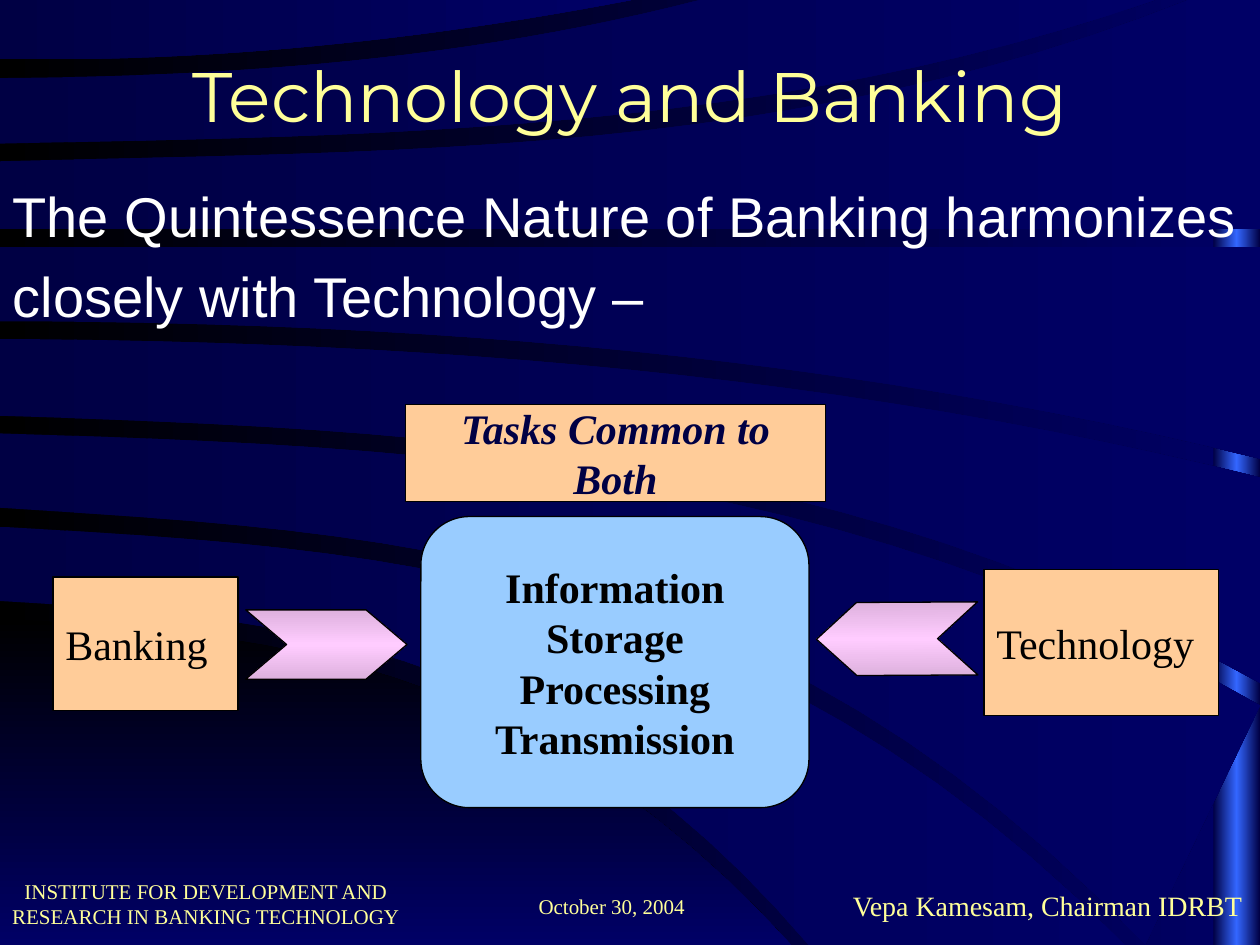
from copy import deepcopy
from math import prod

from lxml import etree
from pptx import Presentation
from pptx.dml.color import RGBColor
from pptx.enum.shapes import MSO_SHAPE
from pptx.enum.text import MSO_ANCHOR, MSO_AUTO_SIZE, PP_ALIGN
from pptx.oxml.ns import qn
from pptx.util import Inches, Pt

RECTANGLE = MSO_SHAPE.RECTANGLE
ROUNDED = MSO_SHAPE.ROUNDED_RECTANGLE
CHEVRON = MSO_SHAPE.CHEVRON
LEFT, CENTER = PP_ALIGN.LEFT, PP_ALIGN.CENTER
TOP, MIDDLE = MSO_ANCHOR.TOP, MSO_ANCHOR.MIDDLE

YELLOW, WHITE, BLACK, NAVY = "FFFF99", "FFFFFF", "000000", "000044"
PEACH, SKY, BLUE = "FFCC99", "99CCFF", "000066"
STRIPE_STOPS = [NAVY, "3366FF", NAVY]
ARROW_STOPS = ["DDB1DD", "FFCCFF", "DDB1DD"]
WIDTH, HEIGHT = 10, 7.5
CURVE_STEPS = 24


def color(value):
    return RGBColor.from_string(value)


def curve(end, *heights):
    """Points of a smooth edge from x = 0 to end through evenly spaced heights."""
    knots = range(len(heights))
    last = len(heights) - 1
    points = []
    for step in range(CURVE_STEPS + 1):
        place = last * step / CURVE_STEPS
        y = sum(height * prod((place - other) / (knot - other)
                              for other in knots if other != knot)
                for knot, height in enumerate(heights))
        points.append((end * step / CURVE_STEPS, y))
    return points


def band(upper, lower):
    return curve(*upper) + curve(*lower)[::-1]


def write_text(frame, lines, size=24, font="Times New Roman", text_color=BLACK,
               bold=False, italic=False, align=LEFT, anchor=MIDDLE,
               wrap=True, gap=0, plain_list=False):
    """Put one paragraph per line into the frame."""
    frame.word_wrap = wrap
    frame.auto_size = MSO_AUTO_SIZE.NONE
    frame.vertical_anchor = anchor
    for index, line in enumerate(lines):
        paragraph = frame.add_paragraph() if index else frame.paragraphs[0]
        paragraph.text = line
        if plain_list:
            properties = paragraph._p.get_or_add_pPr()
            properties.set("marL", "0")
            properties.set("indent", "0")
            etree.SubElement(properties, qn("a:buNone"))
        paragraph.alignment = align
        paragraph.space_before = Pt(gap if index else 0)
        paragraph.font.size = Pt(size)
        paragraph.font.name = font
        paragraph.font.bold = bold
        paragraph.font.italic = italic
        paragraph.font.color.rgb = color(text_color)


class SlideBuilder:
    def __init__(self, slide):
        self.slide = slide
        self.shapes = slide.shapes

    def gradient(self, owner, element, colors, angle=0):
        owner.fill.gradient()
        owner.fill.gradient_angle = angle
        stop_list = element.find(".//" + qn("a:gsLst"))
        while len(stop_list) < len(colors):
            stop_list.append(deepcopy(stop_list[0]))
        for index, stop in enumerate(owner.fill.gradient_stops):
            stop.position = index / (len(colors) - 1)
            stop.color.rgb = color(colors[index])

    def style(self, shape, fill, outlined, angle=0):
        shape.shadow.inherit = False
        if isinstance(fill, list):
            self.gradient(shape, shape._element.spPr, fill, angle)
        else:
            shape.fill.solid()
            shape.fill.fore_color.rgb = color(fill)
        if outlined:
            shape.line.color.rgb = color(BLACK)
            shape.line.width = Pt(0.75)
        else:
            shape.line.fill.background()

    def background(self, colors):
        self.gradient(self.slide.background, self.slide._element, colors)

    def swoosh(self, points, colors, angle=0):
        corners = [(Inches(x), Inches(y)) for x, y in points]
        builder = self.shapes.build_freeform(*corners[0])
        builder.add_line_segments(corners[1:], close=True)
        self.style(builder.convert_to_shape(), colors, False, angle)

    def box(self, kind, place, fill, lines=(), outlined=True, **text_format):
        shape = self.shapes.add_shape(kind, *map(Inches, place))
        self.style(shape, fill, outlined)
        if lines:
            write_text(shape.text_frame, lines, **text_format)

    def arrow(self, place, notch, rotation=0):
        shape = self.shapes.add_shape(CHEVRON, *map(Inches, place))
        self.style(shape, ARROW_STOPS, True, angle=270)
        shape.adjustments[0] = notch
        shape.rotation = rotation

    def label(self, place, lines, **text_format):
        shape = self.shapes.add_textbox(*map(Inches, place))
        write_text(shape.text_frame, lines, text_color=YELLOW, anchor=TOP,
                   **text_format)

    def placeholder(self, index, place, lines, **text_format):
        shape = self.slide.placeholders[index]
        shape.left, shape.top, shape.width, shape.height = map(Inches, place)
        write_text(shape.text_frame, lines, **text_format)
        # Bring in front of the backdrop
        self.shapes._spTree.append(shape._element)


def main():
    presentation = Presentation()
    presentation.slide_width = Inches(WIDTH)
    presentation.slide_height = Inches(HEIGHT)
    layout = presentation.slide_layouts[1]
    builder = SlideBuilder(presentation.slides.add_slide(layout))

    # Backdrop: each edge is its right end and its heights from left to right
    builder.background([BLACK, BLUE])
    builder.box(RECTANGLE, (9.63, 0, 0.37, HEIGHT), STRIPE_STOPS,
                outlined=False)
    glow = curve(6.28, 4.91, 5.12, 5.83, HEIGHT) + [(0, HEIGHT)]
    builder.swoosh(glow, [BLACK, BLUE], angle=270)
    swooshes = [
        band((8.93, 4.18, 4.45, 5.34, HEIGHT), (6.42, 4.77, 4.98, 5.71, HEIGHT)),
        band((WIDTH, 3.44, 3.62, 4.21, 5.6), (9.09, 4.03, 4.31, 5.23, HEIGHT)),
        band((WIDTH, 2.69, 2.8, 3.14, 3.79), (WIDTH, 3.3, 3.48, 4.06, 5.42)),
        band((WIDTH, 1.96, 1.96), (WIDTH, 2.55, 2.65, 2.99, 3.64)),
        curve(9.43, 1.28, 1.19, 0.87, 0) + [(WIDTH, 0), (WIDTH, 1.82), (0, 1.82)],
        band((5.56, 0.62, 0.56, 0.37, 0), (9.17, 1.14, 1.05, 0.75, 0)),
        curve(5.01, 0.47, 0.43, 0.27, 0) + [(0, 0)],
    ]
    for points in swooshes:
        builder.swoosh(points, [NAVY, BLUE])

    # Footer
    builder.label((0, 6.92, 3.27, 0.5),
                  ["INSTITUTE FOR DEVELOPMENT AND",
                   "RESEARCH IN BANKING TECHNOLOGY"],
                  size=12, align=CENTER, wrap=False)
    builder.label((3.69, 7.04, 2.33, 0.3), ["October 30, 2004"],
                  size=12, align=CENTER)
    builder.label((6.67, 7, 3.33, 0.37), ["Vepa Kamesam, Chairman IDRBT"],
                  size=16)

    # Title and opening statement
    builder.placeholder(0, (0.5, 0, 9, 1.5), ["Technology and Banking"],
                        size=40, font="Montserrat", text_color=YELLOW,
                        align=CENTER)
    builder.placeholder(1, (0, 1.39, WIDTH, 5.69),
                        ["The Quintessence Nature of Banking harmonizes",
                         "closely with Technology –"],
                        size=32, font="Arial", text_color=WHITE, anchor=TOP,
                        gap=7.5, plain_list=True)

    # Diagram: two fields meeting in their common tasks
    builder.box(RECTANGLE, (0.42, 4.58, 1.47, 1.06), PEACH, ["Banking"])
    builder.box(RECTANGLE, (7.81, 4.52, 1.86, 1.16), PEACH, ["Technology"])
    builder.box(ROUNDED, (3.34, 4.1, 3.08, 2.31), SKY,
                ["Information Storage", "Processing", "Transmission"],
                bold=True, align=CENTER)
    builder.arrow((1.95, 4.84, 1.28, 0.55), 0.59)
    builder.arrow((6.48, 4.78, 1.28, 0.58), 0.55, rotation=179.7)
    builder.box(RECTANGLE, (3.22, 3.21, 3.33, 0.77), PEACH,
                ["Tasks Common to Both"], text_color=NAVY, bold=True,
                italic=True, align=CENTER)

    presentation.save("out.pptx")


if __name__ == "__main__":
    main()
